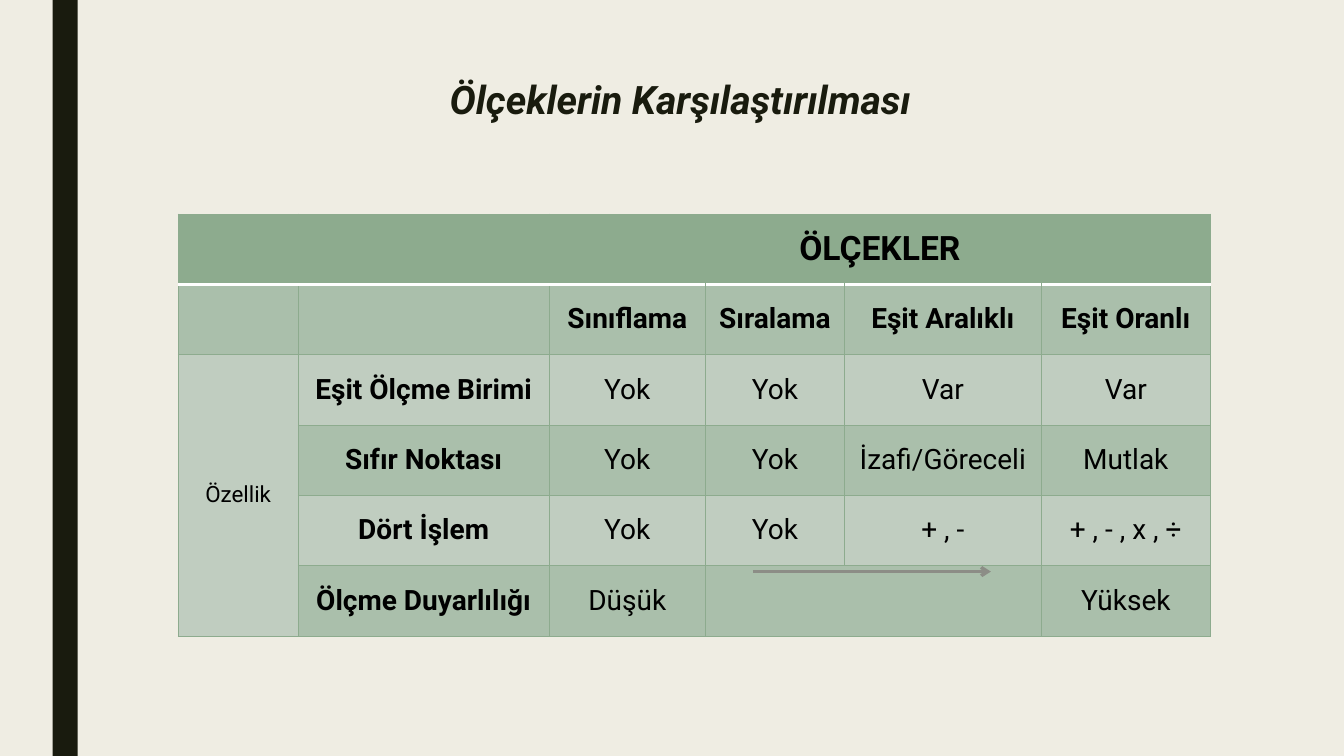
from lxml.etree import SubElement
from pptx import Presentation
from pptx.dml.color import RGBColor
from pptx.enum.shapes import MSO_CONNECTOR, MSO_SHAPE
from pptx.enum.text import MSO_ANCHOR, PP_ALIGN
from pptx.oxml.ns import qn
from pptx.util import Pt

FONT = "Roboto"
INK = "191B0E"
GREEN = "8DAB8E"
MID_GREEN = "AABFAB"
PALE_GREEN = "C0CDC0"
COLUMN_WIDTHS = [85.7, 179.3, 111.6, 99.4, 140.4, 121]
ROW_HEIGHT = 50.25
ROWS = [
    ["", "", "ÖLÇEKLER", "", "", ""],
    ["", "", "Sınıflama", "Sıralama", "Eşit Aralıklı", "Eşit Oranlı"],
    ["Özellik", "Eşit Ölçme Birimi", "Yok", "Yok", "Var", "Var"],
    ["", "Sıfır Noktası", "Yok", "Yok", "İzafi/Göreceli", "Mutlak"],
    ["", "Dört İşlem", "Yok", "Yok", "+ , -", "+ , - , x , ÷"],
    ["", "Ölçme Duyarlılığı", "Düşük", "", "", "Yüksek"],
]
MERGES = [((0, 2), (0, 5)), ((2, 0), (5, 0)), ((5, 3), (5, 4))]


def color(value):
    return RGBColor.from_string(value)


def style_text(para, size, ink, bold=False, italic=False):
    para.alignment = PP_ALIGN.CENTER
    for span in para.runs:
        font = span.font
        font.name, font.size = FONT, Pt(size)
        font.bold, font.italic = bold, italic
        font.color.rgb = color(ink)


def add_side_bar(page, left, top, width, height):
    bar = page.shapes.add_shape(
        MSO_SHAPE.RECTANGLE, Pt(left), Pt(top), Pt(width), Pt(height))
    bar.shadow.inherit = False
    bar.fill.solid()
    bar.fill.fore_color.rgb = color(INK)
    bar.line.fill.background()


def add_title(page, left, top, width, height):
    box = page.shapes.add_textbox(Pt(left), Pt(top), Pt(width), Pt(height))
    frame = box.text_frame
    frame.word_wrap = True
    frame.vertical_anchor = MSO_ANCHOR.TOP
    frame.text = "Ölçeklerin Karşılaştırılması"
    para = frame.paragraphs[0]
    para.line_spacing = 0.89
    style_text(para, 28, INK, bold=True, italic=True)


def set_border(cell, side, value, width):
    line = SubElement(cell._tc.get_or_add_tcPr(), qn(f"a:ln{side}"), w=str(Pt(width)))
    fill = SubElement(line, qn("a:solidFill"))
    SubElement(fill, qn("a:srgbClr"), val=value)


def style_cell(cell, row, column):
    header_edge = {0: "B", 1: "T"}.get(row)
    for side in "LRTB":
        if side == header_edge:
            set_border(cell, side, "FFFFFF", 2.75)
        else:
            set_border(cell, side, GREEN, 0.5)
    cell.fill.solid()
    shade = GREEN if row == 0 else MID_GREEN if row % 2 else PALE_GREEN
    cell.fill.fore_color.rgb = color(shade)
    cell.vertical_anchor = MSO_ANCHOR.MIDDLE
    size = 24 if row == 0 else 16 if column == 0 else 20
    style_text(cell.text_frame.paragraphs[0], size, "000000",
               bold=row < 2 or column == 1)


def add_scale_table(page, left, top):
    frame = page.shapes.add_table(
        len(ROWS), len(COLUMN_WIDTHS), Pt(left), Pt(top),
        Pt(sum(COLUMN_WIDTHS)), Pt(ROW_HEIGHT * len(ROWS)))
    table = frame.table
    table.first_row = table.horz_banding = False
    for column, width in zip(table.columns, COLUMN_WIDTHS):
        column.width = Pt(width)
    for row in table.rows:
        row.height = Pt(ROW_HEIGHT)
    for first, last in MERGES:
        table.cell(*first).merge(table.cell(*last))
    for row, texts in enumerate(ROWS):
        for column, text in enumerate(texts):
            cell = table.cell(row, column)
            if not cell.is_spanned:
                cell.text = text
                style_cell(cell, row, column)


def add_precision_arrow(page, left, top, width):
    arrow = page.shapes.add_connector(
        MSO_CONNECTOR.STRAIGHT, Pt(left), Pt(top), Pt(left + width), Pt(top))
    arrow.line.color.rgb = color("8C8D86")
    arrow.line.width = Pt(2.25)
    SubElement(arrow.line._get_or_add_ln(), qn("a:tailEnd"), type="arrow")
    SubElement(arrow._element.spPr, qn("a:effectLst"))


def main():
    deck = Presentation()
    deck.slide_width, deck.slide_height = Pt(960), Pt(540)
    page = deck.slides.add_slide(deck.slide_layouts[6])
    page.background.fill.solid()
    page.background.fill.fore_color.rgb = color("EFEDE3")
    add_side_bar(page, 37.5, 0, 18, 540)
    add_title(page, 108, 54, 756, 116.6)
    add_scale_table(page, 127.3, 152.8)
    add_precision_arrow(page, 537.8, 408.3, 170)
    deck.save("out.pptx")


if __name__ == "__main__":
    main()
